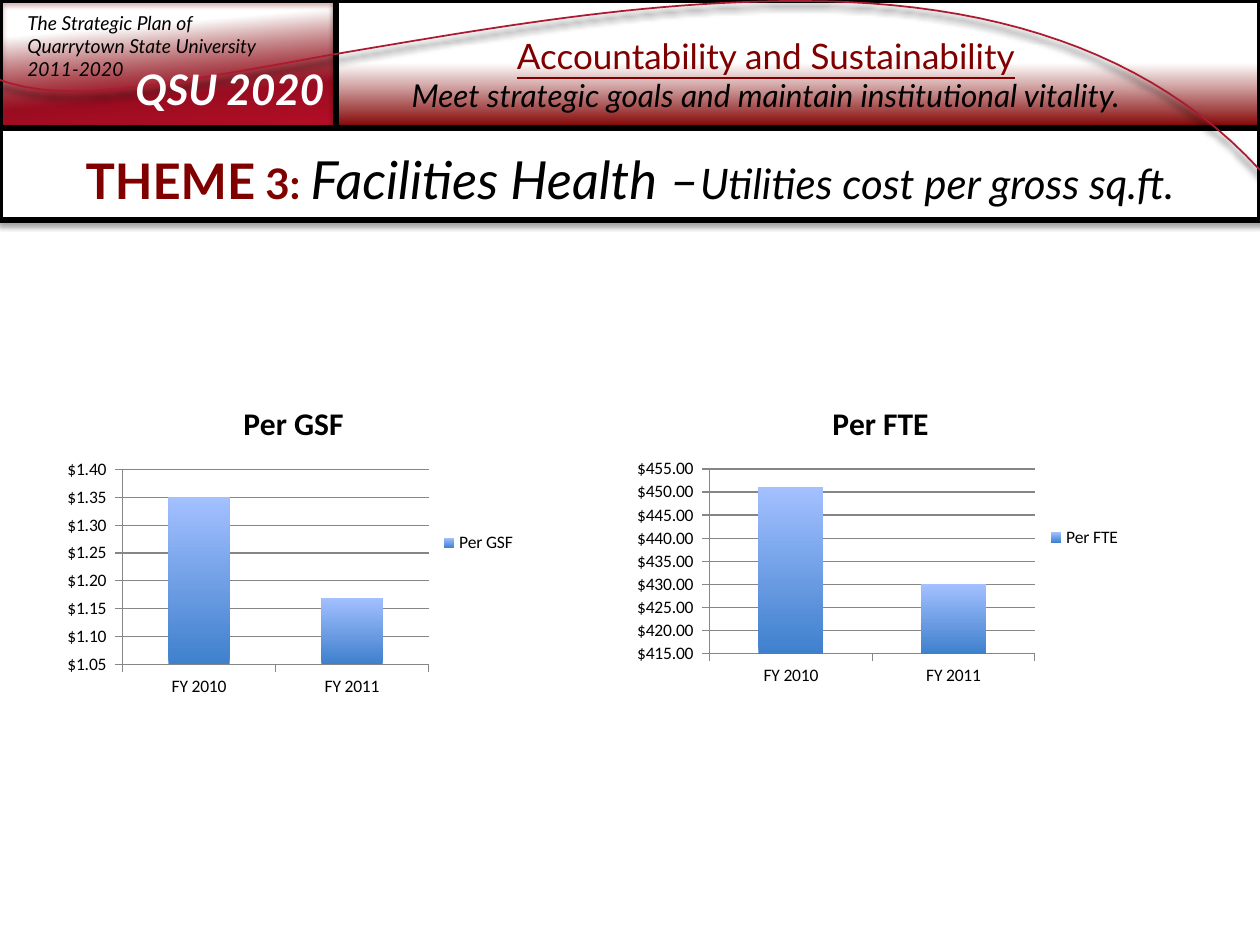
import dataclasses

import pptx
import pptx.chart.data
import pptx.dml.color
import pptx.enum.chart
import pptx.enum.text
import pptx.oxml
import pptx.oxml.ns
import pptx.util

SCALE = 914400 / 126
MONEY = '"$"#,##0.00_);[Red]\\("$"#,##0.00\\)'
CURVE = [
    [(0, 80), (60, 101), (130, 92), (330, 55)],
    [(330, 55), (490, 28), (640, 1), (800, 1)],
    [(800, 1), (990, 1), (1150, 50), (1260, 170)],
]


@dataclasses.dataclass
class Theme:
    font: str = "Lato"
    plot: str = "Calibri"
    black: str = "000000"
    white: str = "FFFFFF"
    red: str = "800000"
    curve: str = "AC1A2F"
    grid: str = "868686"
    badge: tuple = (("800000", 24, 0), ("9A0D21", 71, 100), ("B70F27", 100, 100))
    band: tuple = (("800000", 0, 100), ("FFFFFF", 51, 100))
    bar: tuple = (("3F80CD", 0, 100), ("A3C0FF", 100, 100))
    note: int = 11
    axis: int = 10
    goal: int = 18
    area: int = 20
    mid: int = 24
    lead: int = 28
    head: int = 30


T = Theme()


def px(n):
    return pptx.util.Emu(round(n * SCALE))


def rgb(code):
    return pptx.dml.color.RGBColor.from_string(code)


def grade(fill, props, stops, angle):
    """Fill with (colour, position, opacity) stops, angle clockwise."""
    fill.gradient()
    marks = "".join(
        f'<a:gs pos="{pos * 1000}"><a:srgbClr val="{code}">'
        f'<a:alpha val="{alpha * 1000}"/></a:srgbClr></a:gs>'
        for code, pos, alpha in stops)
    old = props.find(pptx.oxml.ns.qn("a:gradFill"))
    props.replace(old, pptx.oxml.parse_xml(
        f'<a:gradFill {pptx.oxml.ns.nsdecls("a")} rotWithShape="1">'
        f'<a:gsLst>{marks}</a:gsLst>'
        f'<a:lin ang="{angle * 60000}" scaled="0"/></a:gradFill>'))


def shade(shape, code, alpha, blur, dist):
    shape.shadow.inherit = False
    effects = shape._element.spPr.find(pptx.oxml.ns.qn("a:effectLst"))
    effects.append(pptx.oxml.parse_xml(
        f'<a:outerShdw {pptx.oxml.ns.nsdecls("a")} blurRad="{round(blur * 12700)}" '
        f'dist="{round(dist * 12700)}" dir="5400000" rotWithShape="0">'
        f'<a:srgbClr val="{code}"><a:alpha val="{alpha * 1000}"/></a:srgbClr>'
        f'</a:outerShdw>'))


def panel(slide, box, stops=None, angle=0, shadow=T.black):
    shape = slide.shapes.add_shape(1, *map(px, box))
    if stops:
        grade(shape.fill, shape._element.spPr, stops, angle)
    else:
        shape.fill.solid()
        shape.fill.fore_color.rgb = rgb(T.white)
    shape.line.color.rgb = rgb(T.black)
    shape.line.width = pptx.util.Pt(3.5)
    shade(shape, shadow, 35, 3.1, 1.8)


def style(font, size, code=T.black, name=T.font, bold=False, italic=False, under=False):
    font.name, font.size = name, pptx.util.Pt(size)
    font.bold, font.italic, font.underline = bold, italic, under
    font.color.rgb = rgb(code)


def label(slide, box, lines, align=pptx.enum.text.PP_ALIGN.LEFT):
    """Add a text box; each line is its words and its font options."""
    frame = slide.shapes.add_textbox(*map(px, box)).text_frame
    frame.word_wrap = True
    frame.auto_size = pptx.enum.text.MSO_AUTO_SIZE.SHAPE_TO_FIT_TEXT
    frame.text = "\n".join(words for words, _ in lines)
    for para, (_, look) in zip(frame.paragraphs, lines):
        para.alignment = align
        style(para.runs[0].font, **look)


def swoosh(slide, steps=24):
    dots = []
    for a, b, c, d in CURVE:
        for i in range(steps + 1):
            t = i / steps
            u = 1 - t
            dots.append(tuple(
                round((u**3 * p + 3 * u * u * t * q + 3 * u * t * t * r + t**3 * s) * SCALE)
                for p, q, r, s in zip(a, b, c, d)))
    path = slide.shapes.build_freeform(*dots[0])
    path.add_line_segments(dots[1:], close=False)
    shape = path.convert_to_shape()
    shape.fill.background()
    shape.line.color.rgb = rgb(T.curve)
    shape.line.width = pptx.util.Pt(1)
    shade(shape, T.black, 90, 4, 3)


def banner(slide, box):
    left, top, wide, high = box
    split = left + 336
    panel(slide, (left, top, 336, 128), T.badge, 85, T.red)
    panel(slide, (split, top, wide - 336, 128), T.band, 270)
    note = dict(size=T.note, italic=True)
    label(slide, (left + 15, top + 5, 402, 83), [
        ("The Strategic Plan of", note),
        ("Quarrytown State University", note),
        ("2011-2020", note)])
    label(slide, (split - 32, top + 28, 924, 93), [
        ("Accountability and Sustainability", dict(size=T.area, code=T.red, under=True)),
        ("Meet strategic goals and maintain institutional vitality.",
         dict(size=T.goal, italic=True))], pptx.enum.text.PP_ALIGN.CENTER)
    panel(slide, (left, top + 128, wide, high - 128))
    swoosh(slide)
    label(slide, (left + 123, top + 57, 219, 63), [
        ("QSU 2020", dict(size=T.mid, code=T.white, bold=True, italic=True))])


def heading(slide, box):
    title = slide.shapes.title
    slide.shapes._spTree.append(title._element)
    title.left, title.top, title.width, title.height = map(px, box)
    frame = title.text_frame
    frame.word_wrap = True
    frame.auto_size = pptx.enum.text.MSO_AUTO_SIZE.NONE
    frame.vertical_anchor = pptx.enum.text.MSO_ANCHOR.TOP
    para = frame.paragraphs[0]
    para.alignment = pptx.enum.text.PP_ALIGN.CENTER
    for words, look in (
            ("THEME", dict(size=T.lead, code=T.red, bold=True)),
            (" 3: ", dict(size=T.mid, code=T.red, bold=True)),
            ("Facilities Health –", dict(size=T.head, italic=True)),
            ("Utilities cost per gross sq.ft.", dict(size=T.mid, italic=True))):
        run = para.add_run()
        run.text = words
        style(run.font, **look)


def graph(slide, box, name, vals, low, high, step):
    data = pptx.chart.data.CategoryChartData(number_format=MONEY)
    data.categories = ["FY 2010", "FY 2011"]
    data.add_series(name, vals)
    chart = slide.shapes.add_chart(
        pptx.enum.chart.XL_CHART_TYPE.COLUMN_CLUSTERED, *map(px, box), data).chart
    style(chart.font, T.axis, name=T.plot)
    chart.has_title = True
    chart.chart_title.text_frame.text = name
    style(chart.chart_title.text_frame.paragraphs[0].runs[0].font,
          T.goal, name=T.plot, bold=True)
    chart.has_legend = True
    chart.legend.position = pptx.enum.chart.XL_LEGEND_POSITION.RIGHT
    chart.legend.include_in_layout = False
    plot = chart.plots[0]
    plot.gap_width, plot.vary_by_categories = 150, False
    bars = plot.series[0]
    grade(bars.format.fill, bars._element.get_or_add_spPr(), T.bar, 270)
    worth = chart.value_axis
    worth.minimum_scale, worth.maximum_scale, worth.major_unit = low, high, step
    worth.has_major_gridlines = True
    worth.tick_labels.number_format = MONEY
    worth.tick_labels.number_format_is_linked = False
    for part in (worth, chart.category_axis, worth.major_gridlines):
        part.format.line.color.rgb = rgb(T.grid)
        part.format.line.width = pptx.util.Pt(0.75)


def main():
    deck = pptx.Presentation()
    deck.slide_width, deck.slide_height = px(1260), px(945)
    slide = deck.slides.add_slide(deck.slide_layouts[5])
    banner(slide, (0, 0, 1260, 220))
    heading(slide, (0, 141, 1260, 77))
    graph(slide, (58, 383, 471, 320), "Per GSF", (1.35, 1.17), 1.05, 1.4, 0.05)
    graph(slide, (627, 383, 507, 309), "Per FTE", (451, 430), 415, 455, 5)
    deck.save("out.pptx")


if __name__ == "__main__":
    main()
